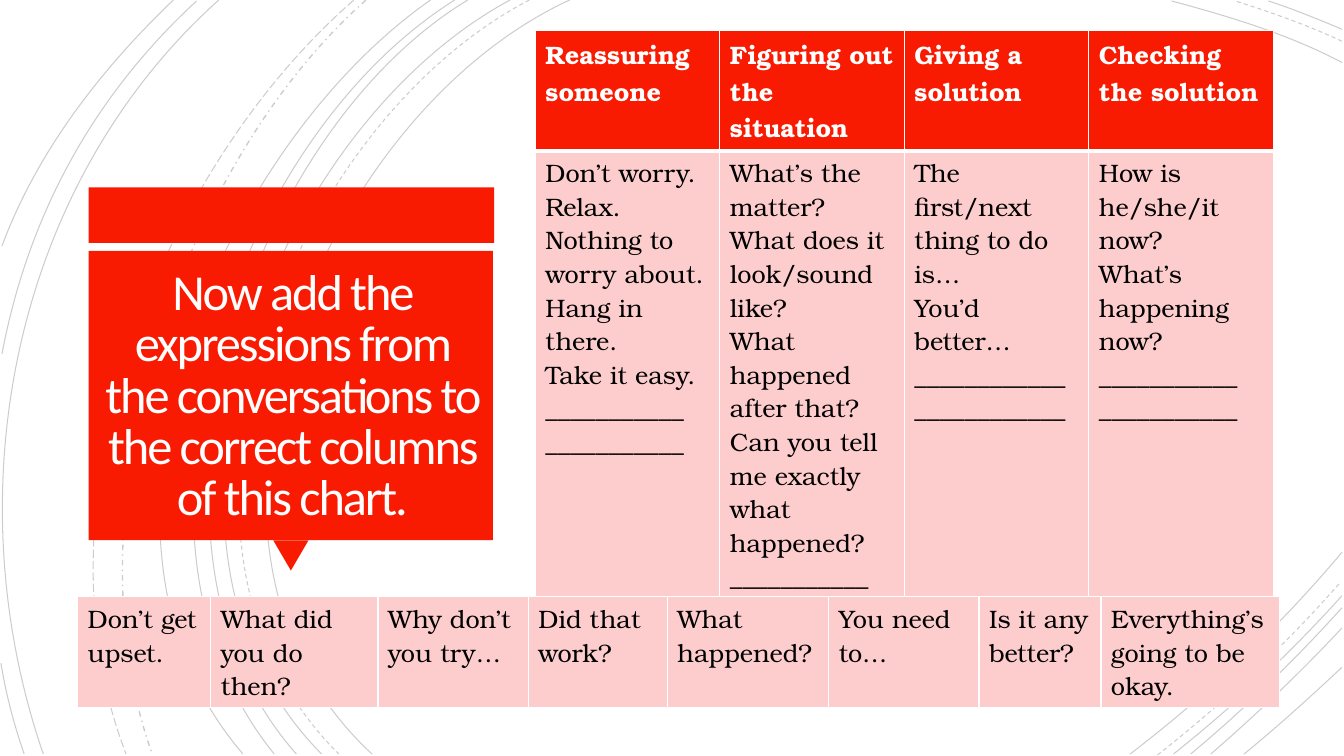
"""Builds a slide that asks learners to sort expressions into the columns of a chart."""
from lxml.etree import SubElement
from pptx import Presentation
from pptx.dml.color import RGBColor
from pptx.enum.dml import MSO_LINE_DASH_STYLE as Dash
from pptx.enum.shapes import MSO_SHAPE as Preset
from pptx.enum.text import MSO_ANCHOR as Anchor, PP_ALIGN as Align
from pptx.oxml.ns import qn
from pptx.util import Pt

EMU_PER_PX = 9144
RED = RGBColor(0xF8, 0x1B, 0x02)
PINK = RGBColor(0xFC, 0xCD, 0xCC)
BLACK = RGBColor(0x00, 0x00, 0x00)
WHITE = RGBColor(0xFF, 0xFF, 0xFF)
TITLE_WHITE = RGBColor(0xFF, 0xFE, 0xFF)

SOLID_ARCS = [
    (565, 0, 315, 115, 143, 540, 369, 748),
    (1331, 62, 1278, 34, 1218, 16, 1162, 1),
    (1121, 748, 1197, 690, 1269, 622, 1331, 548),
    (506, 0, 270, 127, 110, 537, 319, 748),
    (1331, 29, 1307, 19, 1283, 9, 1258, 1),
    (1164, 748, 1223, 701, 1280, 648, 1331, 591),
    (464, 0, 244, 133, 110, 541, 294, 748),
    (1181, 748, 1234, 704, 1284, 655, 1331, 603),
    (451, 0, 231, 138, 97, 533, 272, 748),
    (1201, 748, 1246, 709, 1290, 667, 1331, 623),
    (427, 0, 217, 147, 53, 529, 241, 748),
    (1234, 748, 1267, 721, 1299, 692, 1331, 662),
    (217, 0, 11, 185, -46, 490, 43, 748),
    (195, 1, 92, 96, 28, 214, 2, 351),
    (1, 658, 6, 689, 14, 719, 24, 748),
    (172, 0, 100, 69, 37, 150, 2, 244),
]
DASHED_ARCS = [
    (525, 0, 285, 125, 123, 537, 336, 748),
    (1331, 41, 1297, 25, 1260, 12, 1225, 1),
    (1148, 749, 1213, 698, 1275, 640, 1330, 577),
]
DASH_DOT_ARCS = [(363, 0, 176, 166, 65, 509, 151, 748)]
LONG_DASH_ARCS = [(351, 0, 157, 169, 29, 499, 125, 748)]
ARC_STYLES = [
    (SOLID_ARCS, Dash.SOLID, 0.75),
    (DASHED_ARCS, Dash.DASH, 0.75),
    (DASH_DOT_ARCS, Dash.DASH_DOT, 1),
    (LONG_DASH_ARCS, Dash.LONG_DASH, 0.75),
]

TITLE = "Now add the expressions from the conversations to the correct columns of this chart."
BLANK = "_" * 11
LONG_BLANK = "_" * 12
FUNCTIONS_CHART = [
    ["Reassuring someone", "Figuring out the situation", "Giving a solution", "Checking the solution"],
    [
        f"Don’t worry.\nRelax.\nNothing to worry about.\nHang in there.\nTake it easy.\n{BLANK}\n{BLANK}",
        "What’s the matter?\nWhat does it look/sound like?\nWhat happened after that?\n"
        f"Can you tell me exactly what happened?\n{BLANK}\n{BLANK}",
        f"The first/next thing to do is…\nYou’d better…\n{LONG_BLANK}\n{LONG_BLANK}",
        f"How is he/she/it now?\nWhat’s happening now?\n{BLANK}\n{BLANK}",
    ],
]
EXPRESSIONS = [[
    "Don’t get upset.", "What did you do then?", "Why don’t you try…", "Did that work?",
    "What happened?", "You need to…", "Is it any better?", "Everything’s going to be okay.",
]]


def px(length):
    return length * EMU_PER_PX


class SlideBuilder:
    title_font = "Calibri"
    table_font = "TeX Gyre Bonum"
    title_size = Pt(36)
    table_size = Pt(18)

    def __init__(self, slide):
        self.slide = slide
        self.shapes = slide.shapes

    def arc(self, points, dash, weight):
        start, *targets = [tuple(map(px, pair)) for pair in zip(points[::2], points[1::2])]
        builder = self.shapes.build_freeform(*start, scale=1.0)
        builder.add_line_segments(targets, close=False)
        shape = builder.convert_to_shape()
        shape.shadow.inherit = False
        shape.fill.background()
        shape.line.color.rgb = BLACK
        shape.line.width = Pt(weight)
        shape.line.dash_style = dash
        color = shape.line._get_or_add_ln().find(".//" + qn("a:srgbClr"))
        SubElement(color, qn("a:alpha"), val="20000")
        segments = shape._element.findall(".//" + qn("a:lnTo"))
        outline = segments[0].getparent()
        curve = SubElement(outline, qn("a:cubicBezTo"))
        for segment in segments:
            curve.append(segment[0])
            outline.remove(segment)

    def block(self, preset, left, top, width, height, rotation=0):
        shape = self.shapes.add_shape(preset, *map(px, (left, top, width, height)))
        shape.rotation = rotation
        shape.shadow.inherit = False
        shape.fill.solid()
        shape.fill.fore_color.rgb = RED
        shape.line.fill.background()

    def title(self, text, left, top, width, height, inset):
        title = self.shapes.title
        title.left, title.top, title.width, title.height = map(px, (left, top, width, height))
        self.shapes._spTree.append(title._element)
        frame = title.text_frame
        frame.text = text
        frame.word_wrap = True
        frame.vertical_anchor = Anchor.MIDDLE
        frame.margin_left = frame.margin_top = frame.margin_right = frame.margin_bottom = px(inset)
        paragraph = frame.paragraphs[0]
        paragraph.alignment = Align.CENTER
        paragraph.line_spacing = 0.85
        run = paragraph.runs[0]
        self.format_run(run, self.title_font, self.title_size, TITLE_WHITE)
        run.font._element.set("spc", "-150")

    def table(self, rows, left, top, widths, heights, header=False):
        frame = self.shapes.add_table(
            len(rows), len(widths), *map(px, (left, top, sum(widths), sum(heights))))
        table = frame.table
        table.first_row = header
        table.horz_banding = False
        for column, width in zip(table.columns, widths):
            column.width = px(width)
        for row, height in zip(table.rows, heights):
            row.height = px(height)
        for row_index, texts in enumerate(rows):
            for column_index, text in enumerate(texts):
                is_header = header and row_index == 0
                self.cell(table.cell(row_index, column_index), text, is_header)

    def cell(self, cell, text, is_header):
        cell.text_frame.text = text
        cell.fill.solid()
        cell.fill.fore_color.rgb = RED if is_header else PINK
        for paragraph in cell.text_frame.paragraphs:
            for run in paragraph.runs:
                color = WHITE if is_header else BLACK
                self.format_run(run, self.table_font, self.table_size, color, is_header)
        properties = cell._tc.get_or_add_tcPr()
        weights = {"lnL": 1, "lnR": 1, "lnT": 1, "lnB": 3 if is_header else 1}
        for index, (side, weight) in enumerate(weights.items()):
            border = SubElement(properties, qn("a:" + side), w=str(Pt(weight)))
            fill = SubElement(border, qn("a:solidFill"))
            SubElement(fill, qn("a:srgbClr"), val=str(WHITE))
            properties.insert(index, border)

    def format_run(self, run, name, size, color, bold=False):
        run.font.name = name
        run.font.size = size
        run.font.bold = bold
        run.font.color.rgb = color


def main():
    presentation = Presentation()
    presentation.slide_width = px(1333)
    presentation.slide_height = px(750)
    title_only = presentation.slide_layouts[5]
    builder = SlideBuilder(presentation.slides.add_slide(title_only))

    for arcs, dash, weight in ARC_STYLES:
        for points in arcs:
            builder.arc(points, dash, weight)

    builder.block(Preset.RECTANGLE, 88, 186, 402, 55)
    builder.block(Preset.ISOSCELES_TRIANGLE, 271, 536, 35, 30, rotation=180)
    builder.block(Preset.RECTANGLE, 88, 249, 401, 287)
    builder.title(TITLE, 77, 260, 426, 269, inset=25)
    builder.table(FUNCTIONS_CHART, 531, 30, [183] * 4, [87, 459], header=True)
    builder.table(EXPRESSIONS, 77, 592, [132, 166, 149, 138, 160, 149, 121, 177], [67])

    presentation.save("out.pptx")


if __name__ == "__main__":
    main()
